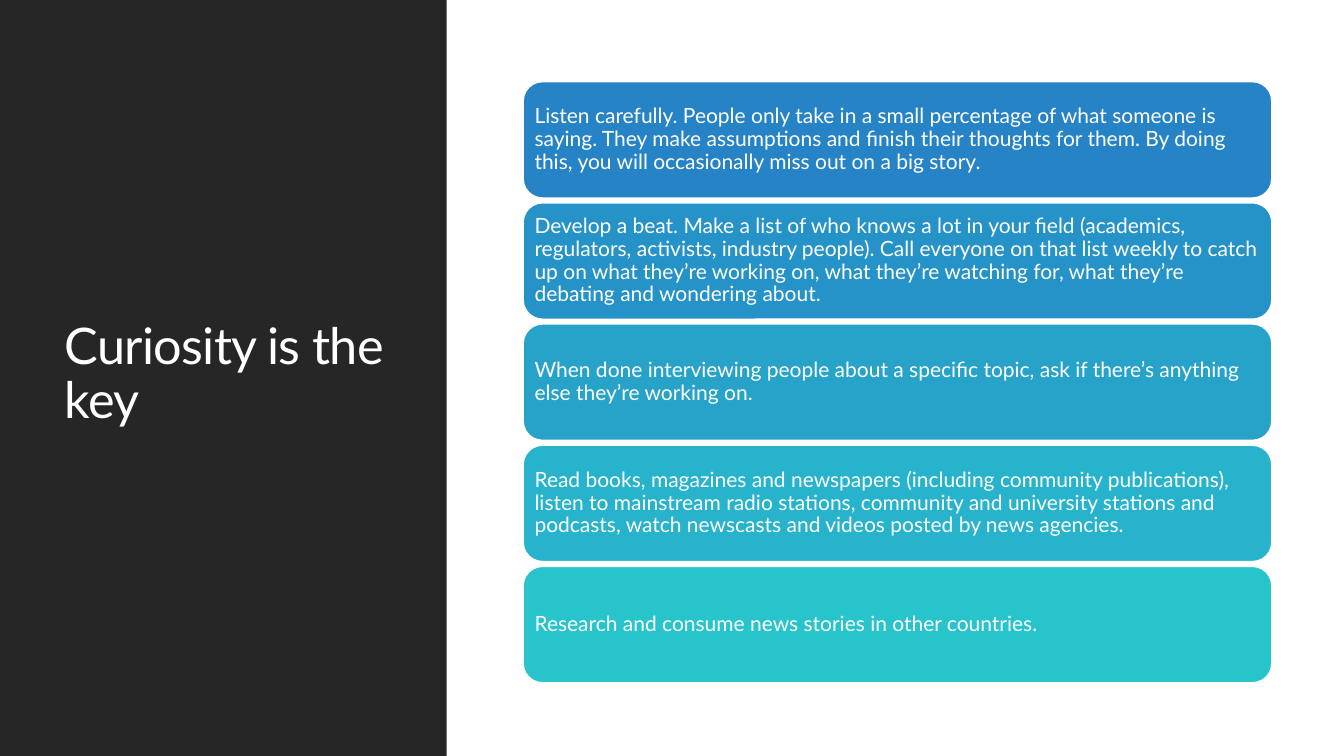
from pptx import Presentation
from pptx.dml.color import RGBColor
from pptx.enum.shapes import MSO_SHAPE
from pptx.enum.text import MSO_ANCHOR, MSO_AUTO_SIZE, PP_ALIGN
from pptx.util import Pt

RECT, ROUNDED = MSO_SHAPE.RECTANGLE, MSO_SHAPE.ROUNDED_RECTANGLE
MIDDLE, LEFT, NO_FIT = MSO_ANCHOR.MIDDLE, PP_ALIGN.LEFT, MSO_AUTO_SIZE.NONE

WHITE = RGBColor(0xFF, 0xFF, 0xFF)
DARK = RGBColor(0x26, 0x26, 0x26)
CARD_FILLS = [
    RGBColor(0x26, 0x83, 0xC6),
    RGBColor(0x26, 0x93, 0xC8),
    RGBColor(0x27, 0xA3, 0xC9),
    RGBColor(0x27, 0xB3, 0xCB),
    RGBColor(0x28, 0xC4, 0xCC),
]

TITLE = "Curiosity is the key"
TIPS = [
    "Listen carefully. People only take in a small percentage of what someone "
    "is saying. They make assumptions and finish their thoughts for them. By "
    "doing this, you will occasionally miss out on a big story.",
    "Develop a beat. Make a list of who knows a lot in your field (academics, "
    "regulators, activists, industry people). Call everyone on that list "
    "weekly to catch up on what they’re working on, what they’re watching "
    "for, what they’re debating and wondering about.",
    "When done interviewing people about a specific topic, ask if there’s "
    "anything else they’re working on.",
    "Read books, magazines and newspapers (including community publications), "
    "listen to mainstream radio stations, community and university stations "
    "and podcasts, watch newscasts and videos posted by news agencies.",
    "Research and consume news stories in other countries.",
]


def write_text(sp, text, size, inset_x, inset_y):
    """Fill a shape with one left-aligned, vertically centred paragraph."""
    tf = sp.text_frame
    frame = {
        "word_wrap": True, "auto_size": NO_FIT, "vertical_anchor": MIDDLE,
        "margin_left": Pt(inset_x), "margin_right": Pt(inset_x),
        "margin_top": Pt(inset_y), "margin_bottom": Pt(inset_y),
    }
    for name, value in frame.items():
        setattr(tf, name, value)
    p = tf.paragraphs[0]
    p.alignment, p.line_spacing = LEFT, 0.9
    r = p.add_run()
    r.text = text
    for name, value in {"name": "Lato", "size": Pt(size)}.items():
        setattr(r.font, name, value)
    r.font.color.rgb = WHITE
    return r


def add_title_panel(s, left, top, width, height):
    # Dark panel behind the title
    panel = s.shapes.add_shape(RECT, Pt(left), Pt(top), Pt(width), Pt(height))
    panel.shadow.inherit = False
    panel.fill.solid()
    panel.fill.fore_color.rgb = DARK
    panel.line.fill.background()
    s.shapes._spTree.insert(2, panel._element)

    # Title placeholder
    title = s.shapes.title
    box = {"left": left + 39, "top": top + 41,
           "width": width - 76, "height": height - 86}
    for name, value in box.items():
        setattr(title, name, Pt(value))
    r = write_text(title, TITLE, 36, 7.2, 3.6)
    r._r.get_or_add_rPr().set("spc", "-50")


def add_tip_cards(s, left, top, width, height, gap=3.2):
    # Equal cards stacked from top to bottom
    card_height = (height - gap * (len(TIPS) - 1)) / len(TIPS)
    for i, (tip, fill) in enumerate(zip(TIPS, CARD_FILLS)):
        y = top + i * (card_height + gap)
        card = s.shapes.add_shape(ROUNDED, Pt(left), Pt(y), Pt(width), Pt(card_height))
        card.shadow.inherit = False
        card.fill.solid()
        card.fill.fore_color.rgb = fill
        card.line.color.rgb = WHITE
        card.line.width = Pt(1.25)
        write_text(card, tip, 15, 4.2, 4.2)


def main():
    prs = Presentation()
    prs.slide_width, prs.slide_height = Pt(960), Pt(540)
    s = prs.slides.add_slide(prs.slide_layouts.get_by_name("Title Only"))
    add_title_panel(s, 0, 0, 319, 540)
    add_tip_cards(s, 373.6, 58.2, 535, 429.6)
    prs.save("out.pptx")


if __name__ == "__main__":
    main()
